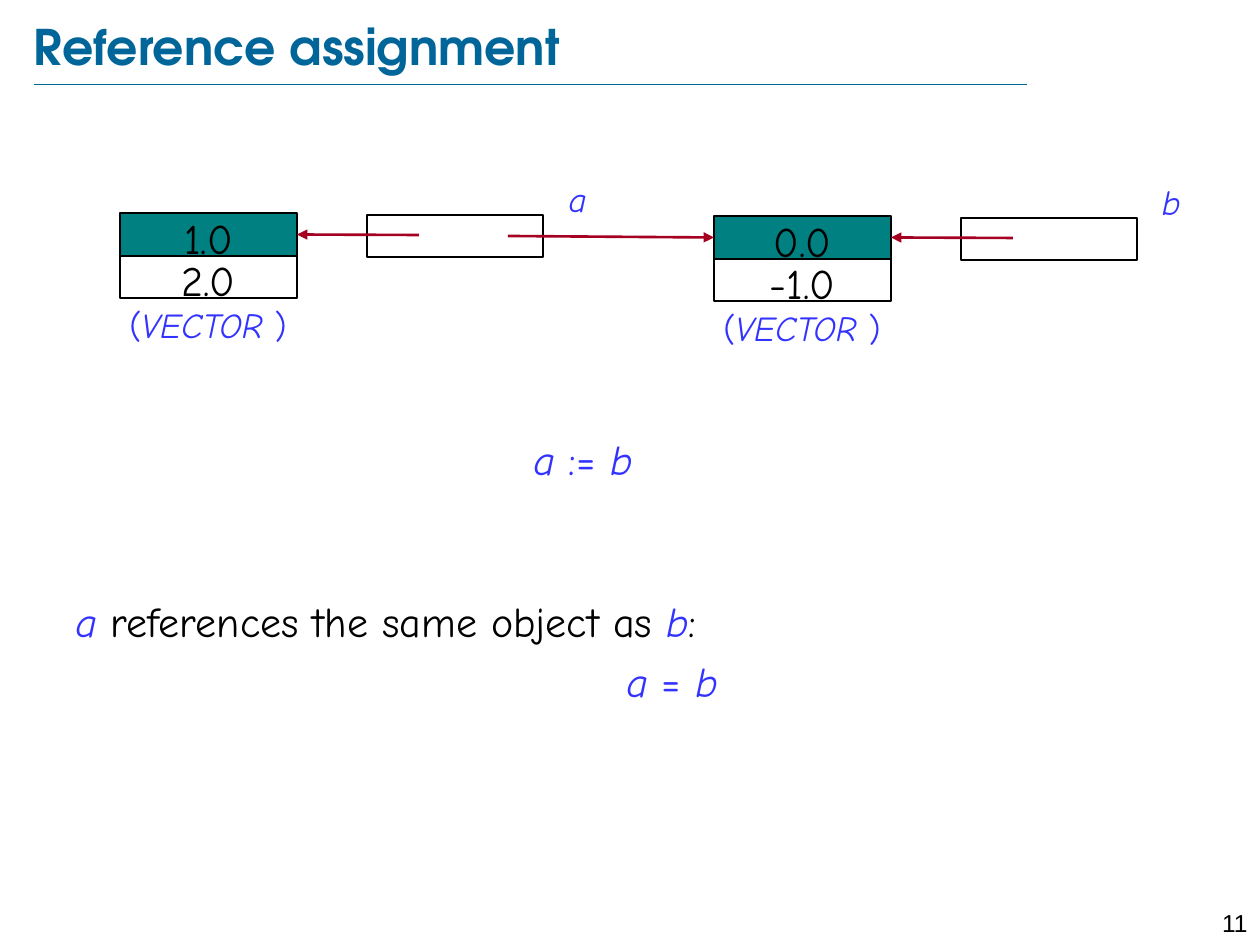
from lxml import etree
from pptx import Presentation
from pptx.dml.color import RGBColor
from pptx.enum.shapes import MSO_CONNECTOR, MSO_SHAPE
from pptx.enum.text import MSO_ANCHOR, PP_ALIGN
from pptx.oxml.ns import qn
from pptx.util import Emu, Pt

RECT, STRAIGHT = MSO_SHAPE.RECTANGLE, MSO_CONNECTOR.STRAIGHT
TOP, MIDDLE = MSO_ANCHOR.TOP, MSO_ANCHOR.MIDDLE
LEFT, CENTER, RIGHT = PP_ALIGN.LEFT, PP_ALIGN.CENTER, PP_ALIGN.RIGHT
LEFT_SIDE, RIGHT_SIDE = 1, 3
EMU_PER_PX = 914400 / 126
COLORS = {"title": "006699", "teal": "008080", "white": "FFFFFF",
          "black": "000000", "code": "3333FF", "arrow": "A50021"}


def px(n):
    return Emu(round(n * EMU_PER_PX))


def rgb(name):
    return RGBColor.from_string(COLORS[name])


def code(text, italic=True):
    return text, "code", italic


def plain(text):
    return text, "black", False


class SlideBuilder:
    font = "Comic Neue"

    def __init__(self, slide):
        self.slide = slide

    def put_text(self, frame, paragraphs, size, align=LEFT, anchor=TOP, inset=None,
                 wrap=True, font=None, bold=False, indent=0):
        """Fill a frame; paragraphs after the first are spaced and indented."""
        frame.word_wrap = wrap
        frame.vertical_anchor = anchor
        if inset is not None:
            for side in ("left", "top", "right", "bottom"):
                setattr(frame, f"margin_{side}", px(inset))
        for i, runs in enumerate(paragraphs):
            paragraph = frame.add_paragraph() if i else frame.paragraphs[0]
            paragraph.alignment = align
            if i:
                paragraph.space_before = Pt(5.5)
                paragraph._p.get_or_add_pPr().set("marL", str(px(indent)))
            for text, color, italic in runs:
                run = paragraph.add_run()
                run.text = text
                run.font.color.rgb = rgb(color)
                style = {"name": font or self.font, "size": Pt(size),
                         "bold": bold, "italic": italic}
                for name, value in style.items():
                    setattr(run.font, name, value)

    def text(self, x, y, w, h, paragraphs, size, **style):
        box = self.slide.shapes.add_textbox(px(x), px(y), px(w), px(h))
        self.put_text(box.text_frame, paragraphs, size, **style)

    def cell(self, x, y, w, h, fill, value=None):
        rect = self.slide.shapes.add_shape(RECT, px(x), px(y), px(w), px(h))
        rect.shadow.inherit = False
        rect.fill.solid()
        rect.fill.fore_color.rgb = rgb(fill)
        rect.line.color.rgb = rgb("black")
        rect.line.width = Pt(0.75)
        if value:
            self.put_text(rect.text_frame, [[plain(value)]], 24, align=CENTER,
                          anchor=MIDDLE, inset=0, wrap=False)
            rect.text_frame.margin_top = px(6)
        return rect

    def line(self, x1, y1, x2, y2, color, width, arrow_end=None):
        line = self.slide.shapes.add_connector(STRAIGHT, px(x1), px(y1), px(x2), px(y2))
        line.line.color.rgb = rgb(color)
        line.line.width = Pt(width)
        if arrow_end:
            etree.SubElement(line.get_or_add_ln(), qn(f"a:{arrow_end}"), type="triangle")
        etree.SubElement(line.element.spPr, qn("a:effectLst"))
        return line

    def reference(self, x, y, name, values):
        """A vector object with the reference that points to it."""
        first = self.cell(x, y, 177, 43, "teal", values[0])
        self.cell(x, y + 43, 177, 42, "white", values[1])
        self.text(x - 26, y + 84, 228, 55,
                  [[code("(", False), code("VECTOR "), code(")", False)]], 20, align=CENTER)
        self.cell(x + 247, y + 2, 176, 42, "white")
        self.text(x + 424, y - 42, 55, 55, [[code(name)]], 20, align=RIGHT)
        pointer = self.line(x + 177, y + 22, x + 299, y + 22, "arrow", 1.5, "headEnd")
        pointer.begin_connect(first, RIGHT_SIDE)
        return first


def main():
    prs = Presentation()
    prs.slide_width, prs.slide_height = px(1260), px(945)
    builder = SlideBuilder(prs.slides.add_slide(prs.slide_layouts[6]))

    # Title, rule and page number
    builder.line(34, 84, 1027, 84, "title", 0.25)
    builder.text(34, 16, 1095, 60, [[("Reference assignment", "title", False)]], 28,
                 anchor=MIDDLE, inset=0, font="TeX Gyre Adventor", bold=True)
    builder.text(1191, 902, 69, 30, [[plain("11")]], 14, align=RIGHT, font="Arial")

    # Two references and their objects
    builder.reference(120, 213, "a", ("1.0", "2.0"))
    b_object = builder.reference(714, 216, "b", ("0.0", "-1.0"))

    # After the assignment, a points to b's object
    new_pointer = builder.line(508, 236, 714, 238, "arrow", 1.5, "tailEnd")
    new_pointer.end_connect(b_object, LEFT_SIDE)

    # Assignment and its effect
    builder.text(521, 427, 240, 69, [[code("a"), code(" := ", False), code("b")]], 24)
    builder.text(63, 589, 1121, 195, [
        [code("a "), plain("references the same object as "), code("b"), plain(":")],
        [code("a"), code(" = ", False), code("b")],
    ], 24, indent=551)

    prs.save("out.pptx")


if __name__ == "__main__":
    main()
